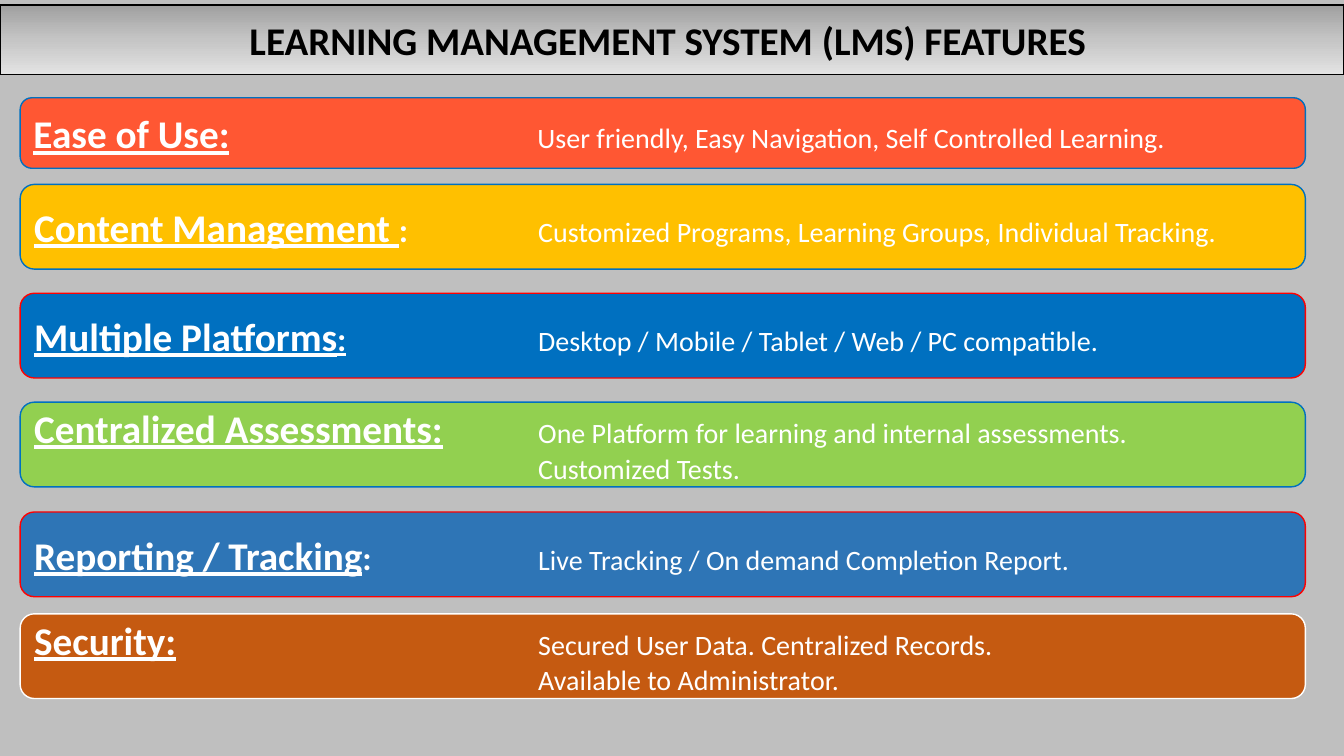
from copy import deepcopy

from lxml import etree
from pptx import Presentation
from pptx.dml.color import RGBColor
from pptx.enum.shapes import MSO_SHAPE
from pptx.enum.text import MSO_ANCHOR, PP_ALIGN
from pptx.oxml.ns import qn
from pptx.util import Pt

RECT = MSO_SHAPE.RECTANGLE
ROUNDED = MSO_SHAPE.ROUNDED_RECTANGLE
MIDDLE = MSO_ANCHOR.MIDDLE
LEFT, CENTER = PP_ALIGN.LEFT, PP_ALIGN.CENTER

FONT = "Calibri"
TAB_STOP = 360
BLUE, RED, WHITE, BLACK = "0070C0", "FF0000", "FFFFFF", "000000"

# top, height, fill, line, heading, colon after it, colon underlined, details
FEATURES = [
    (69.84, 50.4, "FF5733", BLUE, "Ease of Use:", "", False,
     ["User friendly, Easy Navigation, Self Controlled Learning."]),
    (131.76, 60.48, "FFC000", BLUE, "Content Management ", ":", False,
     ["Customized Programs, Learning Groups, Individual Tracking."]),
    (209.52, 60.48, "0070C0", RED, "Multiple Platforms", ":", True,
     ["Desktop / Mobile / Tablet / Web / PC compatible."]),
    (287.28, 60.48, "92D050", BLUE, "Centralized Assessments:", "", False,
     ["One Platform for learning and internal assessments.",
      "Customized Tests."]),
    (365.76, 60.48, "2E75B6", RED, "Reporting / Tracking", ":", False,
     ["Live Tracking / On demand Completion Report."]),
    (438.48, 60.48, "C55A11", WHITE, "Security:", "", False,
     ["Secured User Data. Centralized Records.",
      "Available to Administrator."]),
]


def rgb(value):
    """Return the colour for a hex string."""
    return RGBColor.from_string(value)


def add_box(slide, kind, left, top, width, height, line):
    """Add an outlined shape with middle-anchored text."""
    sp = slide.shapes.add_shape(kind, Pt(left), Pt(top), Pt(width), Pt(height))
    sp.shadow.inherit = False
    sp.line.color.rgb = rgb(line)
    sp.line.width = Pt(1)
    sp.text_frame.word_wrap = True
    sp.text_frame.vertical_anchor = MIDDLE
    return sp


def add_run(p, text, size, bold=False, underline=False):
    """Append a run with its own size and emphasis."""
    r = p.add_run()
    r.text = text
    r.font.size = Pt(size)
    r.font.bold = bold
    r.font.underline = underline


def add_tab_stop(p):
    """Give a paragraph the tab stop of the detail column."""
    tabs = etree.SubElement(p._p.get_or_add_pPr(), qn("a:tabLst"))
    etree.SubElement(tabs, qn("a:tab"), pos=str(Pt(TAB_STOP)), algn="l")


def fill_gradient(sp, start, middle, end):
    """Fill a shape with three colours from top to bottom."""
    sp.fill.gradient()
    sp.fill.gradient_angle = 270
    stops = sp._element.spPr.find(qn("a:gradFill")).find(qn("a:gsLst"))
    stops.insert(1, deepcopy(stops[0]))
    for stop, color, position in zip(sp.fill.gradient_stops,
                                     (start, middle, end), (0, 0.5, 1)):
        stop.color.rgb = rgb(color)
        stop.position = position


def add_title(slide, text):
    """Add the gradient title band."""
    sp = add_box(slide, RECT, 0, 3.6, 960, 49.68, BLACK)
    fill_gradient(sp, "A0A0A0", "C5C5C5", "E3E3E3")
    p = sp.text_frame.paragraphs[0]
    p.text = text
    p.alignment = CENTER
    p.font.name = FONT
    p.font.size = Pt(28)
    p.font.bold = True
    p.font.color.rgb = rgb(BLACK)


def add_feature(slide, top, height, fill, line, heading, colon, underlined,
                details):
    """Add one feature bar with its heading and detail lines."""
    sp = add_box(slide, ROUNDED, 14.4, top, 918, height, line)
    sp.fill.solid()
    sp.fill.fore_color.rgb = rgb(fill)
    tf = sp.text_frame
    for i, detail in enumerate(details):
        p = tf.add_paragraph() if i else tf.paragraphs[0]
        p.alignment = LEFT
        add_tab_stop(p)
        p.font.name = FONT
        p.font.color.rgb = rgb(WHITE)
        if i == 0:
            add_run(p, heading, 28, True, True)
            if colon:
                add_run(p, colon, 24, True, underlined)
        add_run(p, "\t" + detail, 20)


def main():
    """Build and save the slide."""
    prs = Presentation()
    prs.slide_width, prs.slide_height = Pt(960), Pt(540)
    slide = prs.slides.add_slide(prs.slide_layouts[6])
    slide.background.fill.solid()
    slide.background.fill.fore_color.rgb = rgb("BFBFBF")
    add_title(slide, "LEARNING MANAGEMENT SYSTEM (LMS) FEATURES ")
    for feature in FEATURES:
        add_feature(slide, *feature)
    prs.save("out.pptx")


if __name__ == "__main__":
    main()
